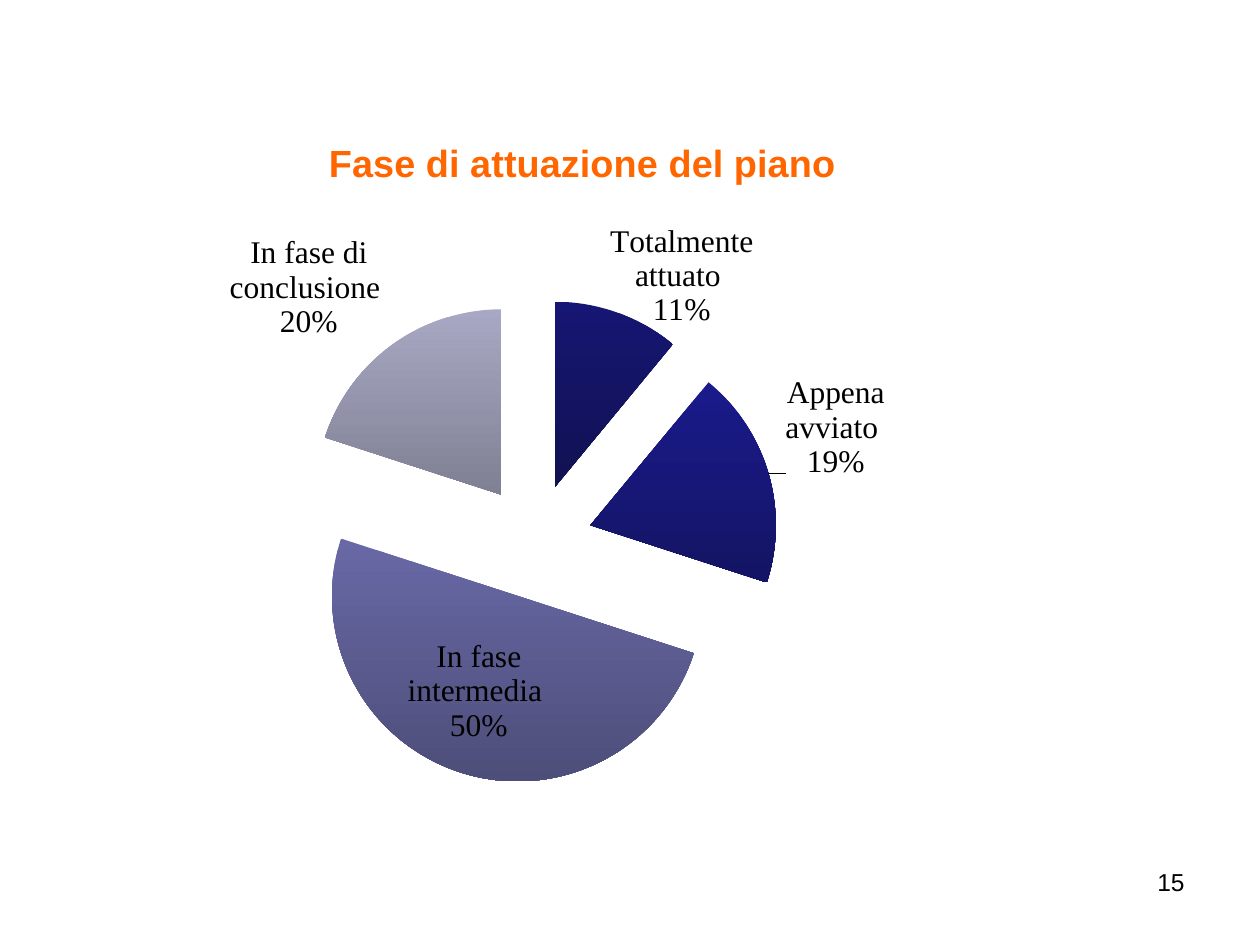
from pptx import Presentation
from pptx.chart.data import CategoryChartData
from pptx.dml.color import RGBColor
from pptx.enum.chart import XL_CHART_TYPE as ChartType, XL_LABEL_POSITION as LabelPos
from pptx.enum.text import PP_ALIGN as Align
from pptx.oxml.ns import qn
from pptx.util import Pt
from lxml.etree import SubElement

# category, value, gradient top and bottom, label position, label offset (x, y)
SLICES = [
    ("Totalmente attuato ", 11, "161674", "111152", LabelPos.OUTSIDE_END, (-0.01, 0.03)),
    ("Appena avviato ", 19, "1A1A8C", "141464", LabelPos.OUTSIDE_END, (0.01, 0.01)),
    ("In fase intermedia ", 50, "6868A6", "4E4E7A", LabelPos.CENTER, (-0.01, 0.01)),
    ("In fase di conclusione ", 20, "A8A8C4", "808094", LabelPos.OUTSIDE_END, (0, 0)),
]


def color(value):
    return RGBColor.from_string(value)


def set_layout(parent, index, **values):
    """Give a chart part a manual layout as its child at index."""
    for old in parent.findall(qn("c:layout")):
        parent.remove(old)
    layout = SubElement(parent, qn("c:layout"))
    parent.insert(index, layout)
    manual = SubElement(layout, qn("c:manualLayout"))
    for tag, value in values.items():
        SubElement(manual, qn("c:" + tag)).set("val", str(value))


class Deck:
    font = "Arial"
    label_font = "Times New Roman"
    text = "000000"
    accent = "FF6600"

    def __init__(self, width, height):
        self.prs = Presentation()
        self.prs.slide_width, self.prs.slide_height = Pt(width), Pt(height)

    def add_slide(self):
        self.s = self.prs.slides.add_slide(self.prs.slide_layouts[6])

    def style(self, font, fill, **formats):
        for name, value in formats.items():
            setattr(font, name, value)
        font.color.rgb = color(fill)

    def text_box(self, text, box, size, align):
        tf = self.s.shapes.add_textbox(*map(Pt, box)).text_frame
        tf.word_wrap = True
        p = tf.paragraphs[0]
        p.alignment = align
        r = p.add_run()
        r.text = text
        self.style(r.font, self.text, name=self.font, size=Pt(size))

    def pie(self, title, slices, box, explosion):
        data = CategoryChartData()
        data.categories = [item[0] for item in slices]
        data.add_series("Series 1", [item[1] for item in slices])
        chart = self.s.shapes.add_chart(ChartType.PIE, *map(Pt, box), data).chart
        chart.has_legend = False
        self.style(chart.font, self.text, name=self.font, size=Pt(18))

        # Title
        chart.has_title = True
        p = chart.chart_title.text_frame.paragraphs[0]
        r = p.add_run()
        r.text = title
        self.style(r.font, self.accent, name=self.font, size=Pt(21.6), bold=True)
        set_layout(chart.chart_title._element, 1, xMode="edge", yMode="edge", x=0.26, y=0.01)

        # Plot area
        plot = chart.plots[0]
        plot.vary_by_categories = True
        set_layout(plot._element.getparent(), 0, layoutTarget="inner", xMode="edge",
                   yMode="edge", x=0.23, y=0.17, w=0.49, h=0.81)

        # Slices and their labels
        series = plot.series[0]
        labels = series.data_labels
        labels.show_value = False
        labels.show_category_name = labels.show_percentage = True
        for i, (_, _, top, bottom, position, offset) in enumerate(slices):
            point = series.points[i]
            fill = point.format.fill
            fill.gradient()
            fill.gradient_angle = 270
            for stop, value in zip(fill.gradient_stops, (top, bottom)):
                stop.color.rgb = color(value)
            point.format.line.fill.background()
            self.style(point.data_label.font, self.text, name=self.label_font, size=Pt(18))
            point.data_label.position = position
            self.label_content(series._element.findall(".//" + qn("c:dLbl"))[i], offset)
        part = SubElement(series._element, qn("c:explosion"))
        part.set("val", str(explosion))
        series._element.find(qn("c:dPt")).addprevious(part)

    def label_content(self, label, offset):
        flags = {"showVal": "0", "showCatName": "1", "showPercent": "1"}
        for tag, value in flags.items():
            label.find(qn("c:" + tag)).set("val", value)
        SubElement(label, qn("c:separator")).text = "\n"
        if any(offset):
            set_layout(label, 1, x=offset[0], y=offset[1])


def main():
    deck = Deck(720, 540)
    deck.add_slide()

    # Pie chart
    deck.pie("Fase di attuazione del piano ", SLICES, (36.72, 71.28, 566.64, 414), 31)

    # Slide number
    deck.text_box("15", (516.24, 491.76, 167.76, 37.44), 14, Align.RIGHT)

    deck.prs.save("out.pptx")


if __name__ == "__main__":
    main()
